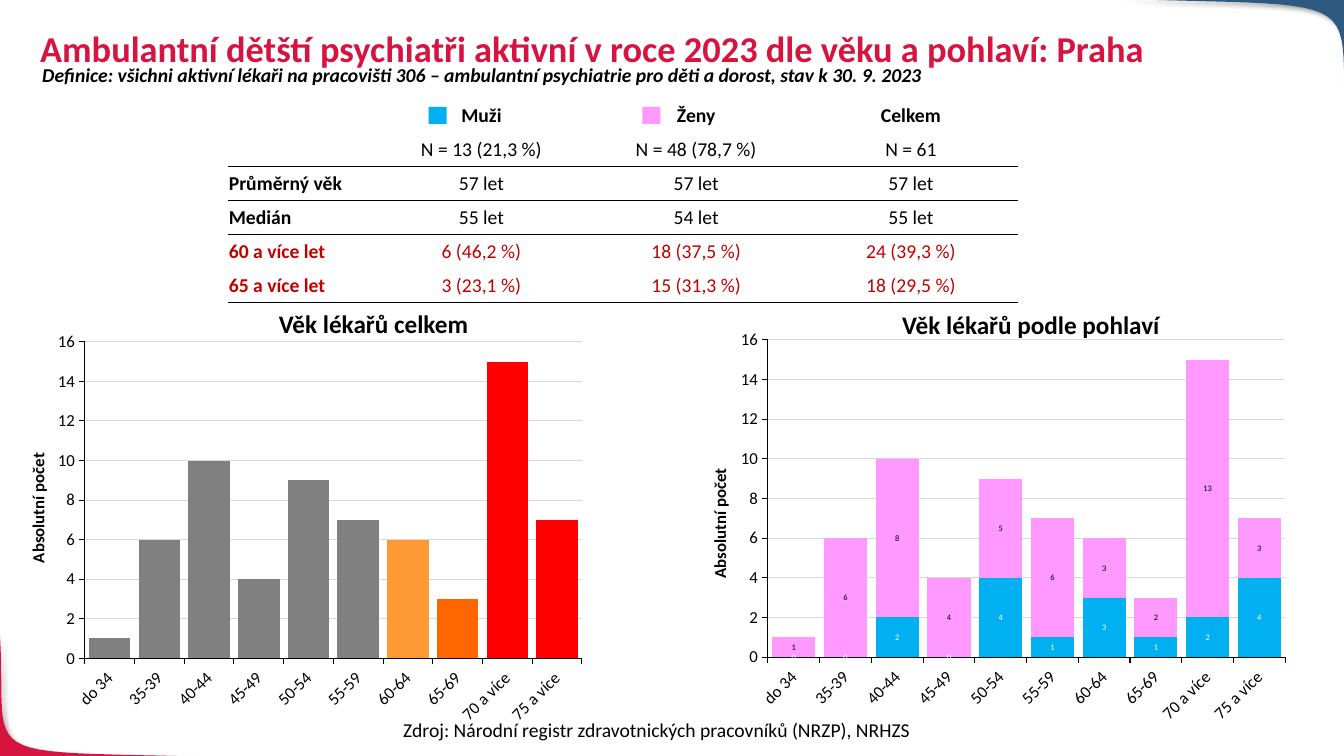
from lxml import etree
from pptx import Presentation
from pptx import util as u
from pptx.chart.data import CategoryChartData
from pptx.dml.color import RGBColor
from pptx.enum import chart as ch, shapes, text
from pptx.oxml import parse_xml
from pptx.oxml.ns import nsdecls, qn

# Content
WIDTH, HEIGHT = 13.33, 7.5
FONT = "Calibri"
COLORS = {"black": "000000", "white": "FFFFFF", "title": "D71440", "corner": "2E5980",
          "alert": "C00000", "men": "00B0F0", "women": "FF99FF", "grid": "D9D9D9",
          "grey": "808080", "amber": "FF9933", "orange": "FF6600", "red": "FF0000"}

AGES = ["do 34", "35-39", "40-44", "45-49", "50-54", "55-59", "60-64", "65-69",
        "70 a více", "75 a více"]
TOTAL = [1, 6, 10, 4, 9, 7, 6, 3, 15, 7]
MEN = [0, 0, 2, 0, 4, 1, 3, 1, 2, 4]
WOMEN = [1, 6, 8, 4, 5, 6, 3, 2, 13, 3]
HIGHLIGHTS = {6: "amber", 7: "orange", 8: "red", 9: "red"}

ROWS = [("", "Muži", "Ženy", "Celkem"),
        ("", "N = 13 (21,3 %)", "N = 48 (78,7 %)", "N = 61"),
        ("Průměrný věk", "57 let", "57 let", "57 let"),
        ("Medián", "55 let", "54 let", "55 let"),
        ("60 a více let", "6 (46,2 %)", "18 (37,5 %)", "24 (39,3 %)"),
        ("65 a více let", "3 (23,1 %)", "15 (31,3 %)", "18 (29,5 %)")]
RULED_ROWS = {1, 2, 3, 5}
ALERT_ROWS = {4, 5}
COLUMN_WIDTHS = [1.45, 2.13, 2.13, 2.13]
ROW_HEIGHT = 2.02 / len(ROWS)

# Text, (left, top, width, height), format
CENTER, LEFT = text.PP_ALIGN.CENTER, text.PP_ALIGN.LEFT
HEADING = {"size": 18, "bold": True}
AXIS_TITLE = {"size": 12, "bold": True}
TEXTS = [
    ("Věk lékařů celkem", (1.63, 3.01, 4.15, 0.4), CENTER, HEADING),
    ("Věk lékařů podle pohlaví", (8.15, 3.02, 4.15, 0.4), CENTER, HEADING),
    ("Zdroj: Národní registr zdravotnických pracovníků (NRZP), NRHZS",
     (3.18, 7.07, 6.67, 0.34), CENTER, {"size": 14}),
    ("Ambulantní dětští psychiatři aktivní v roce 2023 dle věku a pohlaví: Praha",
     (0.3, 0.18, 12.34, 0.59), LEFT, {"size": 26, "bold": True, "color": "title"}),
    ("Definice: všichni aktivní lékaři na pracovišti 306 – ambulantní psychiatrie "
     "pro děti a dorost, stav k 30. 9. 2023",
     (0.32, 0.58, 12.61, 0.34), LEFT, {"size": 14, "bold": True, "italic": True}),
]

# Curve control points, outer corner point, colour
CORNERS = [
    ([(2.13, 7.51), (-0.34, 7.44), (0.08, 7.59), (0, 6.3)], (-0.01, 7.51), "title"),
    ([(11.11, -0.01), (13.7, 0.07), (13.26, -0.1), (13.35, 1.42)], (13.35, -0.01), "corner"),
]


def rgb(name):
    return RGBColor.from_string(COLORS[name])


def inches(values):
    return [u.Inches(value) for value in values]


def format_font(font, size, color="black", **settings):
    settings.update(name=FONT, size=u.Pt(size))
    for name, value in settings.items():
        setattr(font, name, value)
    font.color.rgb = rgb(color)


def paint(shape, color):
    shape.shadow.inherit = False
    shape.fill.solid()
    shape.fill.fore_color.rgb = rgb(color)
    shape.line.fill.background()


def add_corner(slide, curve, corner, color):
    points = []
    for step in range(25):
        t = step / 24
        weights = ((1 - t) ** 3, 3 * t * (1 - t) ** 2, 3 * t * t * (1 - t), t ** 3)
        points.append(inches(sum(w * p[axis] for w, p in zip(weights, curve))
                             for axis in (0, 1)))
    builder = slide.shapes.build_freeform(*points[0], scale=1.0)
    builder.add_line_segments(points[1:] + [inches(corner)], close=True)
    shape = builder.convert_to_shape()
    paint(shape, color)
    effects = shape._element.spPr.find(qn("a:effectLst"))
    effects.append(parse_xml(
        f'<a:outerShdw {nsdecls("a")} blurRad="50800" dist="38100" dir="2700000">'
        '<a:srgbClr val="000000"><a:alpha val="40000"/></a:srgbClr></a:outerShdw>'))


def add_text(slide, content, box, align, style, rotation=0):
    shape = slide.shapes.add_textbox(*inches(box))
    shape.rotation = rotation
    shape.text_frame.word_wrap = not rotation
    if style.get("color") == "title":
        shape.text_frame.vertical_anchor = text.MSO_ANCHOR.MIDDLE
    paragraph = shape.text_frame.paragraphs[0]
    paragraph.alignment = align
    run = paragraph.add_run()
    run.text = content
    format_font(run.font, **style)


def add_age_chart(slide, kind, box, series_list, labelled):
    data = CategoryChartData(number_format="0")
    data.categories = AGES
    for number, (values, _, _) in enumerate(series_list, 1):
        data.add_series(f"Series {number}", values)
    chart = slide.shapes.add_chart(kind, *inches(box), data).chart
    chart.has_legend = chart.has_title = False
    format_font(chart.font, 12)
    plot = chart.plots[0]
    plot.vary_by_categories = False
    plot.gap_width = 20
    plot.overlap = 100 if labelled else 0
    for series, (_, color, label_color) in zip(plot.series, series_list):
        series.format.fill.solid()
        series.format.fill.fore_color.rgb = rgb(color)
        if labelled:
            labels = series.data_labels
            labels.show_value = True
            labels.number_format, labels.number_format_is_linked = "0", False
            labels.position = ch.XL_LABEL_POSITION.CENTER
            format_font(labels.font, 6, label_color)

    # Axes
    for axis in (chart.category_axis, chart.value_axis):
        axis.major_tick_mark = ch.XL_TICK_MARK.OUTSIDE
        axis.minor_tick_mark = ch.XL_TICK_MARK.NONE
        axis.format.line.color.rgb = rgb("black")
        axis.format.line.width = u.Pt(0.75)
        format_font(axis.tick_labels.font, 12)
    chart.category_axis._element.txPr.bodyPr.set("rot", "-2700000")
    value_axis = chart.value_axis
    value_axis.minimum_scale, value_axis.maximum_scale, value_axis.major_unit = 0, 16, 2
    grid = value_axis.major_gridlines.format.line
    grid.color.rgb, grid.width = rgb("grid"), u.Pt(0.75)

    # Plot area as shares of the chart
    area = chart._chartSpace.chart.plotArea
    for old in area.findall(qn("c:layout")):
        area.remove(old)
    parts = "".join(f'<c:{tag} val="{value}"/>' for tag, value in (
        ("layoutTarget", "inner"), ("xMode", "edge"), ("yMode", "edge"),
        ("x", 0.067), ("y", 0.045), ("w", 0.913), ("h", 0.773)))
    area.insert(0, parse_xml(
        f'<c:layout {nsdecls("c")}><c:manualLayout>{parts}</c:manualLayout></c:layout>'))
    return plot


def set_borders(cell, above, below):
    properties = cell._tc.get_or_add_tcPr()
    for place, (side, ruled) in enumerate(
            (("L", False), ("R", False), ("T", above), ("B", below))):
        line = etree.Element(qn(f"a:ln{side}"), w="12700")
        if ruled:
            fill = etree.SubElement(line, qn("a:solidFill"))
            etree.SubElement(fill, qn("a:srgbClr"), val=COLORS["black"])
        else:
            etree.SubElement(line, qn("a:noFill"))
        properties.insert(place, line)


def add_summary(slide):
    box = (2.26, 0.98, sum(COLUMN_WIDTHS), ROW_HEIGHT * len(ROWS))
    table = slide.shapes.add_table(len(ROWS), len(COLUMN_WIDTHS), *inches(box)).table
    table.first_row = table.horz_banding = False
    for column, width in zip(table.columns, COLUMN_WIDTHS):
        column.width = u.Inches(width)
    for r, row in enumerate(ROWS):
        for c, content in enumerate(row):
            cell = table.cell(r, c)
            cell.fill.background()
            set_borders(cell, r - 1 in RULED_ROWS, r in RULED_ROWS)
            cell.vertical_anchor = text.MSO_ANCHOR.MIDDLE
            cell.margin_left = cell.margin_right = cell.margin_top = u.Inches(0.01)
            cell.margin_bottom = 0
            paragraph = cell.text_frame.paragraphs[0]
            paragraph.alignment = CENTER if c else LEFT
            paragraph.text = content
            format_font(paragraph.font if not content else paragraph.runs[0].font, 14,
                        "alert" if r in ALERT_ROWS else "black", bold=r == 0 or c == 0)


def main():
    presentation = Presentation()
    presentation.slide_width, presentation.slide_height = inches((WIDTH, HEIGHT))
    slide = presentation.slides.add_slide(presentation.slide_layouts[6])
    for corner in CORNERS:
        add_corner(slide, *corner)

    # Charts with rotated axis titles
    kinds = ch.XL_CHART_TYPE
    total = add_age_chart(slide, kinds.COLUMN_CLUSTERED, (0.48, 3.21, 5.4, 4.06),
                          [(TOTAL, "grey", None)], False)
    for index, color in HIGHLIGHTS.items():
        fill = total.series[0].points[index].format.fill
        fill.solid()
        fill.fore_color.rgb = rgb(color)
    add_age_chart(slide, kinds.COLUMN_STACKED, (7.24, 3.19, 5.62, 4.07),
                  [(MEN, "men", "white"), (WOMEN, "women", "black")], True)
    for left, top in ((-0.28, 4.89), (6.48, 5.04)):
        add_text(slide, "Absolutní počet", (left, top, 1.31, 0.3), CENTER, AXIS_TITLE, 270)

    # Colour keys, table and texts
    for left, color in ((4.25, "men"), (6.37, "women")):
        key = slide.shapes.add_shape(shapes.MSO_SHAPE.RECTANGLE,
                                     *inches((left, 1.06, 0.18, 0.17)))
        paint(key, color)
    add_summary(slide)
    for entry in TEXTS:
        add_text(slide, *entry)
    presentation.save("out.pptx")


if __name__ == "__main__":
    main()
